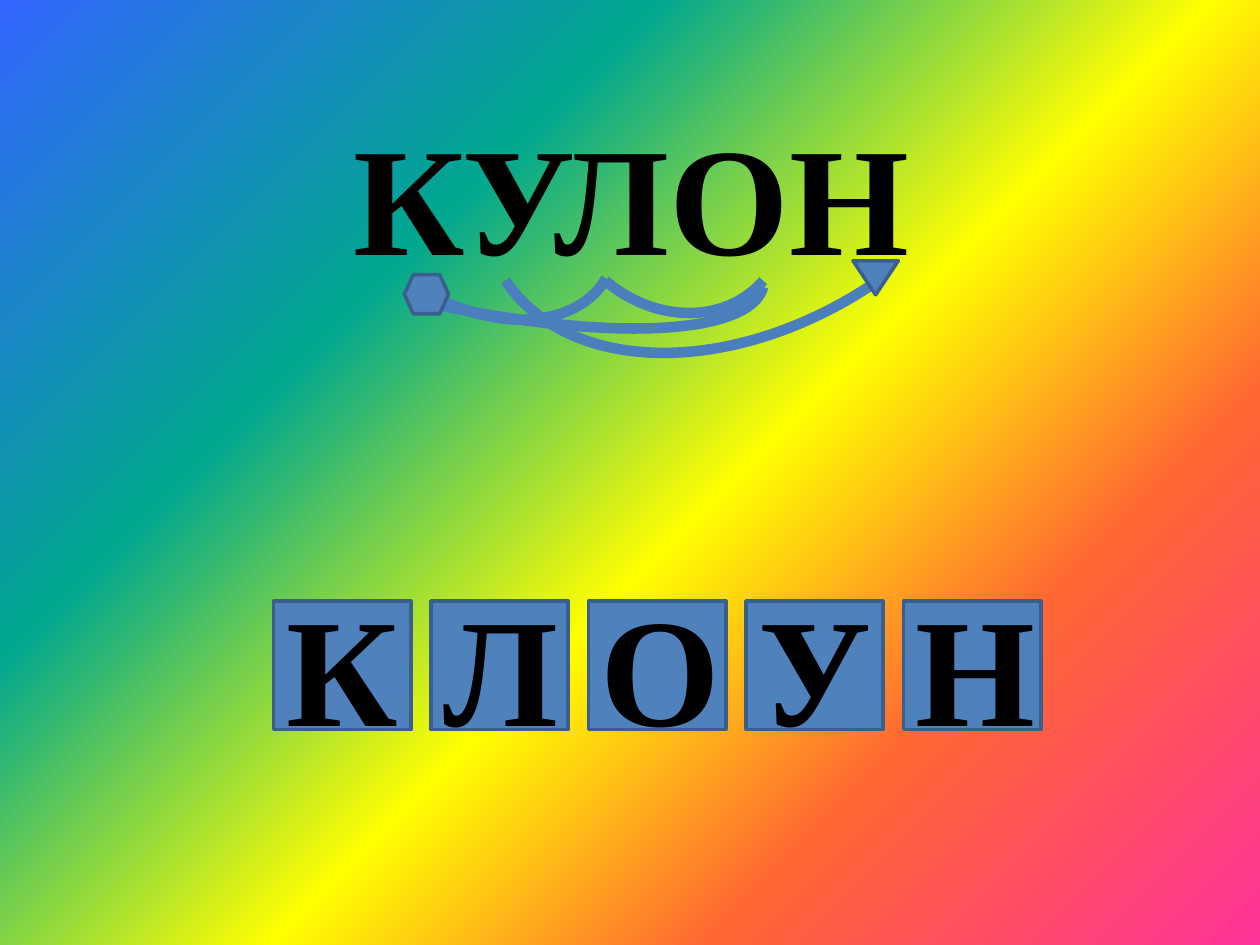
"""Build the slide where the word КУЛОН is rearranged into КЛОУН."""
from dataclasses import dataclass

from lxml.etree import SubElement
from pptx import Presentation
from pptx.dml.color import RGBColor
from pptx.enum.shapes import MSO_SHAPE
from pptx.enum.text import MSO_ANCHOR, MSO_AUTO_SIZE, PP_ALIGN
from pptx.oxml.ns import qn
from pptx.shapes.autoshape import Shape
from pptx.slide import Slide
from pptx.text.text import TextFrame
from pptx.util import Inches, Pt

WIDTH, HEIGHT = Inches(10), Inches(7.5)
FONT = "Times New Roman"
BLACK = RGBColor(0x00, 0x00, 0x00)
BLUE = RGBColor(0x4F, 0x81, 0xBD)
OUTLINE = RGBColor(0x3A, 0x5F, 0x8C)
ARC_BLUE = RGBColor(0x4B, 0x7E, 0xBC)
RAINBOW = (
    (0, RGBColor(0xFF, 0x33, 0x99)),
    (25, RGBColor(0xFF, 0x66, 0x33)),
    (45, RGBColor(0xFF, 0xFF, 0x00)),
    (70, RGBColor(0x01, 0xA7, 0x8F)),
    (100, RGBColor(0x33, 0x66, 0xFF)),
)


@dataclass(frozen=True)
class Area:
    """Hold a rectangle in percent of the slide's width and height."""

    left: float
    top: float
    width: float
    height: float

    def emu(self) -> tuple[int, int, int, int]:
        """Return the rectangle as slide lengths."""
        return (
            round(self.left * WIDTH / 100),
            round(self.top * HEIGHT / 100),
            round(self.width * WIDTH / 100),
            round(self.height * HEIGHT / 100),
        )


@dataclass(frozen=True)
class Swap:
    """Describe one curved move of a letter."""

    area: Area
    rotation: float
    end_angle: float = 0


@dataclass(frozen=True)
class Marker:
    """Describe a sign at the end of a curve."""

    kind: MSO_SHAPE
    area: Area


SWAPS = (
    Swap(Area(45.2, 8.8, 16.3, 25.33), 130.6),
    Swap(Area(36, -10.27, 48.3, 44), 146.1),
    Swap(Area(30, 6.27, 16.1, 30.93), 120),
    Swap(Area(24.3, -18.4, 15.9, 78), 104.5, 207.55),
)
MARKERS = (
    Marker(MSO_SHAPE.FLOWCHART_PREPARATION, Area(32.1, 29.07, 3.5, 4.13)),
    Marker(MSO_SHAPE.FLOWCHART_MERGE, Area(67.7, 27.6, 3.6, 3.6)),
)
PUZZLE, ANSWER = "КУЛОН", "КЛОУН"
PUZZLE_AREA = Area(27.1, 10.13, 46.6, 21.07)
FIRST_TILE = Area(21.7, 63.6, 10.9, 13.6)
TILE_STEP = 12.5


def paint_background(slide: Slide) -> None:
    """Fill the background with a rainbow that starts at the lower right."""
    slide.background.fill.gradient()
    gradient = slide.element.find(".//" + qn("a:gradFill"))
    for child in list(gradient):
        gradient.remove(child)
    stops = SubElement(gradient, qn("a:gsLst"))
    for position, color in RAINBOW:
        stop = SubElement(stops, qn("a:gs"), pos=str(position * 1000))
        SubElement(stop, qn("a:srgbClr"), val=str(color))
    focus = SubElement(gradient, qn("a:path"), path="circle")
    SubElement(focus, qn("a:fillToRect"), l="100000", t="100000")


def write(frame: TextFrame, text: str, *, size: float = 88, color: RGBColor = BLACK,
          bold: bool = True, align: PP_ALIGN = PP_ALIGN.LEFT,
          anchor: MSO_ANCHOR = MSO_ANCHOR.TOP, wrap: bool = True) -> None:
    """Write one formatted paragraph."""
    frame.word_wrap = wrap
    frame.vertical_anchor = anchor
    paragraph = frame.paragraphs[0]
    paragraph.alignment = align
    run = paragraph.add_run()
    run.text = text
    run.font.name = FONT
    run.font.size = Pt(size)
    run.font.bold = bold
    run.font.color.rgb = color


def add_block(shapes, kind: MSO_SHAPE, area: Area) -> Shape:
    """Add a blue outlined shape."""
    block = shapes.add_shape(kind, *area.emu())
    block.shadow.inherit = False
    block.fill.solid()
    block.fill.fore_color.rgb = BLUE
    block.line.color.rgb = OUTLINE
    block.line.width = Pt(2)
    return block


def add_swap(slide: Slide, swap: Swap) -> None:
    """Add a thick arc for one move."""
    arc = slide.shapes.add_shape(MSO_SHAPE.ARC, *swap.area.emu())
    arc.shadow.inherit = False
    arc.rotation = swap.rotation
    arc.adjustments[0] = 162
    arc.adjustments[1] = swap.end_angle
    arc.fill.background()
    arc.line.color.rgb = ARC_BLUE
    arc.line.width = Pt(6)


def add_answer(slide: Slide) -> None:
    """Add the row of letter tiles as a group."""
    row = slide.shapes.add_group_shape()
    for column, letter in enumerate(ANSWER):
        area = Area(FIRST_TILE.left + column * TILE_STEP, FIRST_TILE.top,
                    FIRST_TILE.width, FIRST_TILE.height)
        tile = add_block(row.shapes, MSO_SHAPE.RECTANGLE, area)
        write(tile.text_frame, letter, align=PP_ALIGN.CENTER, anchor=MSO_ANCHOR.MIDDLE)


def main() -> None:
    """Build and save the slide."""
    deck = Presentation()
    deck.slide_width, deck.slide_height = WIDTH, HEIGHT
    slide = deck.slides.add_slide(deck.slide_layouts[6])
    paint_background(slide)
    add_answer(slide)
    puzzle = slide.shapes.add_textbox(*PUZZLE_AREA.emu())
    write(puzzle.text_frame, PUZZLE, wrap=False)
    puzzle.text_frame.auto_size = MSO_AUTO_SIZE.SHAPE_TO_FIT_TEXT
    for swap in SWAPS:
        add_swap(slide, swap)
    for marker in MARKERS:
        add_block(slide.shapes, marker.kind, marker.area)
    deck.save("out.pptx")


if __name__ == "__main__":
    main()
